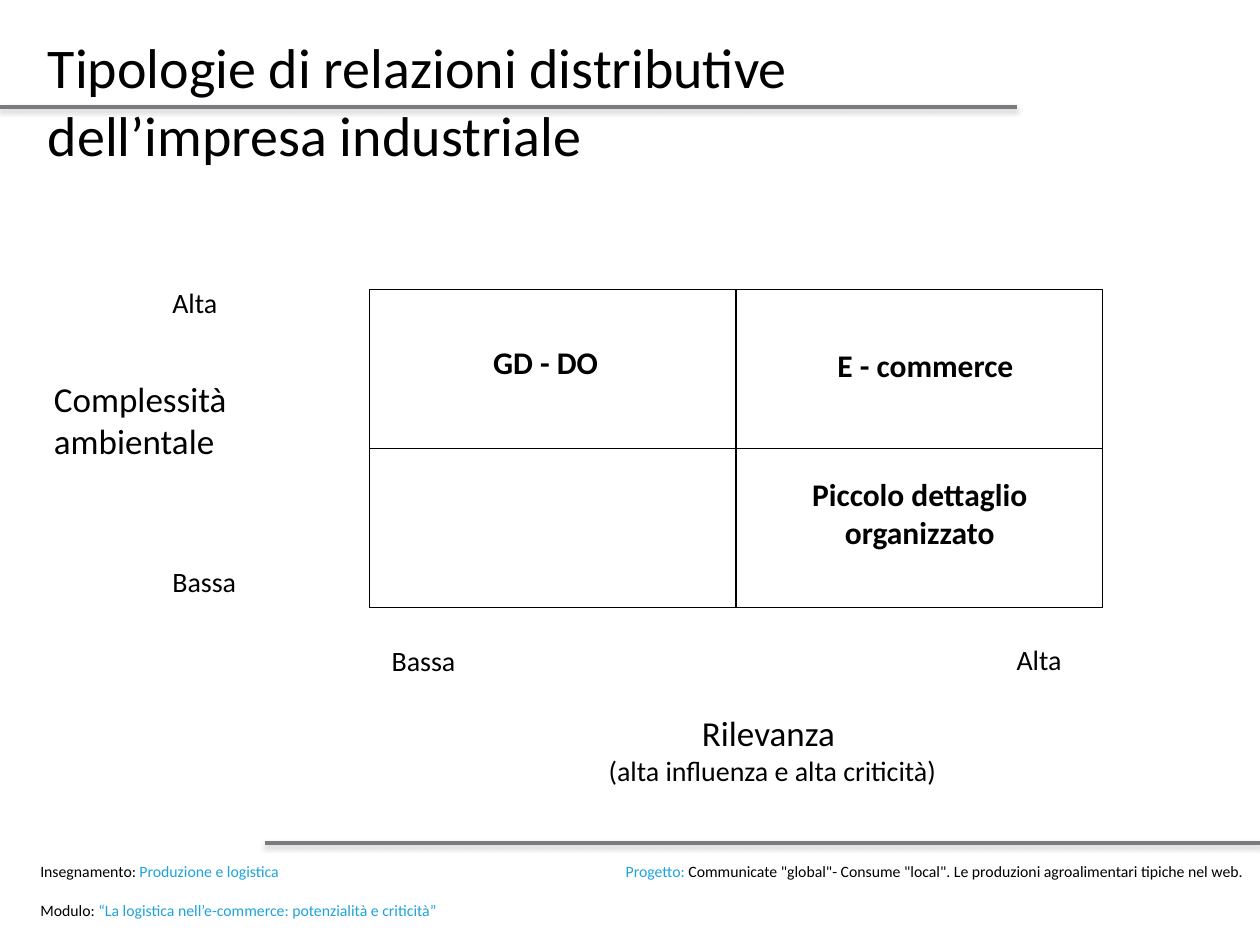
from dataclasses import dataclass
from itertools import product

from lxml.etree import SubElement
from pptx import Presentation
from pptx.dml.color import RGBColor
from pptx.enum.shapes import MSO_CONNECTOR, MSO_SHAPE
from pptx.enum.text import MSO_ANCHOR, PP_ALIGN
from pptx.oxml.ns import qn
from pptx.slide import Slide
from pptx.util import Emu, Inches, Pt

COLORS = {"text": "000000", "accent": "1EA3DB", "rule": "797B7E", "shadow": "808080"}
FONT = "Calibri"
WIDTH, HEIGHT = Inches(10), Inches(7.5)
LEFT, CENTER, RIGHT = PP_ALIGN.LEFT, PP_ALIGN.CENTER, PP_ALIGN.RIGHT


@dataclass(frozen=True)
class Box:
    """Position and size in percent of the slide's width and height."""
    left: float
    top: float
    width: float
    height: float

    def emu(self) -> tuple[Emu, Emu, Emu, Emu]:
        return across(self.left), down(self.top), across(self.width), down(self.height)


@dataclass(frozen=True)
class Span:
    text: str
    size: float
    color: str = "text"
    bold: bool = False


@dataclass(frozen=True)
class Label:
    box: Box
    lines: tuple[tuple[Span, ...], ...]
    align: PP_ALIGN = LEFT
    wrap: bool = True
    inset: bool = True


def across(percent: float) -> Emu:
    return Emu(round(WIDTH * percent / 100))


def down(percent: float) -> Emu:
    return Emu(round(HEIGHT * percent / 100))


def color(name: str) -> RGBColor:
    return RGBColor.from_string(COLORS[name])


def format_run(r, span: Span) -> None:
    r.font.name = FONT
    r.font.size = Pt(span.size)
    r.font.bold = span.bold
    r.font.color.rgb = color(span.color)


def clear_insets(tf) -> None:
    tf.margin_left = tf.margin_top = tf.margin_right = tf.margin_bottom = 0


def add_label(slide: Slide, label: Label) -> None:
    tf = slide.shapes.add_textbox(*label.box.emu()).text_frame
    tf.word_wrap = label.wrap
    if not label.inset:
        clear_insets(tf)
    for i, spans in enumerate(label.lines):
        p = tf.add_paragraph() if i else tf.paragraphs[0]
        p.alignment = label.align
        for span in spans:
            r = p.add_run()
            r.text = span.text
            format_run(r, span)


def add_rule(slide: Slide, start: float, end: float, top: float) -> None:
    """Draw a horizontal rule with a soft shadow below it."""
    line = slide.shapes.add_connector(
        MSO_CONNECTOR.STRAIGHT, across(start), down(top), across(end), down(top))
    line.line.color.rgb = color("rule")
    line.line.width = Pt(2)
    effects = SubElement(line.element.spPr, qn("a:effectLst"))
    shadow = SubElement(effects, qn("a:outerShdw"), blurRad=str(Pt(3)),
                        dist=str(Pt(1.6)), dir="5400000", rotWithShape="0")
    shade = SubElement(shadow, qn("a:srgbClr"), val=COLORS["shadow"])
    SubElement(shade, qn("a:alpha"), val="38000")


def add_matrix(slide: Slide, cell: Box, columns: int, rows: int) -> None:
    for row, column in product(range(rows), range(columns)):
        box = Box(cell.left + column * cell.width, cell.top + row * cell.height,
                  cell.width, cell.height)
        sp = slide.shapes.add_shape(MSO_SHAPE.RECTANGLE, *box.emu())
        sp.shadow.inherit = False
        sp.fill.background()
        sp.line.color.rgb = color("text")
        sp.line.width = Pt(0.75)


def set_title(slide: Slide, text: str, box: Box) -> None:
    title = slide.shapes.title
    title.left, title.top, title.width, title.height = box.emu()
    tf = title.text_frame
    tf.text = text
    tf.word_wrap = True
    tf.vertical_anchor = MSO_ANCHOR.MIDDLE
    clear_insets(tf)
    p = tf.paragraphs[0]
    p.alignment = LEFT
    for r in p.runs:
        format_run(r, Span(r.text, 32))
    title.element.getparent().append(title.element)  # in front of the rule


def scale_label(left: float, top: float, text: str) -> Label:
    return Label(Box(left, top, 15, 4.93), ((Span(text, 16),),))


def quadrant_label(box: Box, text: str) -> Label:
    return Label(box, ((Span(text, 18, bold=True),),), CENTER)


def footer(box: Box, *spans: tuple[str, str], align: PP_ALIGN = LEFT) -> Label:
    line = tuple(Span(text, 9, name) for text, name in spans)
    return Label(box, (line,), align, inset=False)


FOOTERS = (
    footer(Box(43.2, 91.2, 55.4, 2), ("Progetto: ", "accent"),
           ('Communicate "global"- Consume "local". '
            "Le produzioni agroalimentari tipiche nel web.", "text"), align=RIGHT),
    footer(Box(3.2, 91.2, 22, 2), ("Insegnamento: ", "text"),
           ("Produzione e logistica", "accent")),
    footer(Box(3.2, 95.33, 38.5, 2), ("Modulo: ", "text"),
           ("“La logistica nell’e-commerce: potenzialità e criticità”", "accent")),
)
MATRIX_LABELS = (
    scale_label(12.7, 29.6, "Alta"),
    scale_label(12.7, 59.07, "Bassa"),
    scale_label(30.1, 67.47, "Bassa"),
    scale_label(79.7, 67.33, "Alta"),
    Label(Box(3.3, 39.33, 17.4, 10.27),
          ((Span("Complessità", 20),), (Span("ambientale", 20),)), wrap=False),
    Label(Box(46.2, 74.67, 30.2, 9.47),
          ((Span("Rilevanza ", 20),), (Span("(alta influenza e alta criticità)", 16),)),
          CENTER, wrap=False),
    quadrant_label(Box(34.8, 35.6, 17, 5.33), "GD - DO"),
    quadrant_label(Box(61.8, 36, 23.3, 5.33), "E - commerce"),
    quadrant_label(Box(60, 49.6, 26, 9.47), "Piccolo dettaglio organizzato"),
)


def main() -> None:
    prs = Presentation()
    prs.slide_width, prs.slide_height = WIDTH, HEIGHT
    slide = prs.slides.add_slide(prs.slide_layouts.get_by_name("Title Only"))
    add_rule(slide, 0, 80.7, 11.33)
    add_rule(slide, 21, 100, 89.2)
    for label in FOOTERS:
        add_label(slide, label)
    set_title(slide, "Tipologie di relazioni distributive\vdell’impresa industriale",
              Box(3.8, -0.4, 96.2, 22))
    add_matrix(slide, Box(29.3, 30.67, 29.1, 16.8), columns=2, rows=2)
    for label in MATRIX_LABELS:
        add_label(slide, label)
    prs.save("out.pptx")


if __name__ == "__main__":
    main()
